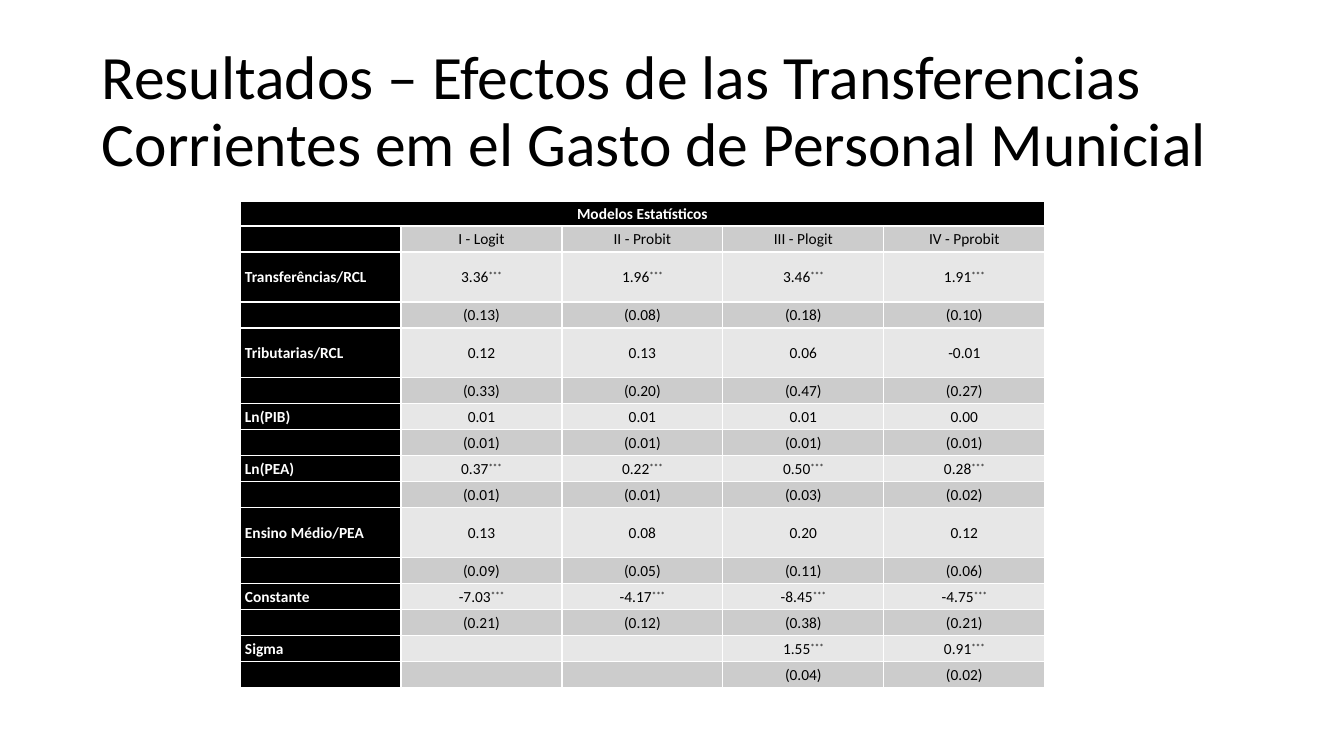
import pptx
import pptx.util
import pptx.dml.color
import pptx.enum.text

# Content
TITLE = ("Resultados – Efectos de las Transferencias "
         "Corrientes em el Gasto de Personal Municial")
HEADING = "Modelos Estatísticos"
STARS = "***"
ROWS = [
    ("", "I - Logit", "II - Probit", "III - Plogit", "IV - Pprobit"),
    ("Transferências/RCL", "3.36***", "1.96***", "3.46***", "1.91***"),
    ("", "(0.13)", "(0.08)", "(0.18)", "(0.10)"),
    ("Tributarias/RCL", "0.12", "0.13", "0.06", "-0.01"),
    ("", "(0.33)", "(0.20)", "(0.47)", "(0.27)"),
    ("Ln(PIB)", "0.01", "0.01", "0.01", "0.00"),
    ("", "(0.01)", "(0.01)", "(0.01)", "(0.01)"),
    ("Ln(PEA)", "0.37***", "0.22***", "0.50***", "0.28***"),
    ("", "(0.01)", "(0.01)", "(0.03)", "(0.02)"),
    ("Ensino Médio/PEA", "0.13", "0.08", "0.20", "0.12"),
    ("", "(0.09)", "(0.05)", "(0.11)", "(0.06)"),
    ("Constante", "-7.03***", "-4.17***", "-8.45***", "-4.75***"),
    ("", "(0.21)", "(0.12)", "(0.38)", "(0.21)"),
    ("Sigma", "", "", "1.55***", "0.91***"),
    ("", "", "", "(0.04)", "(0.02)"),
]
TALL_LABELS = ("Transferências/RCL", "Tributarias/RCL", "Ensino Médio/PEA")

# Look
FONT = "Calibri"
BLACK = pptx.dml.color.RGBColor(0x00, 0x00, 0x00)
WHITE = pptx.dml.color.RGBColor(0xFF, 0xFF, 0xFF)
DARK_BAND = pptx.dml.color.RGBColor(0xCC, 0xCC, 0xCC)
LIGHT_BAND = pptx.dml.color.RGBColor(0xE7, 0xE7, 0xE7)
CELL_SIZE = 11

# Geometry in px
SLIDE_W, SLIDE_H = 1344, 756
TITLE_BOX = (92, 40, 1160, 146)
TABLE_X, TABLE_Y = 240, 201
COL_W, HEADING_H, ROW_H, TALL_H = 161, 25, 26, 50
PAD_X, PAD_Y = 5, 1


def px(n):
    return pptx.util.Emu(round(n * 914400 / 100.8))


def style(p, size, color, bold, spacing):
    p.line_spacing = spacing
    p.font.name = FONT
    p.font.size = pptx.util.Pt(size)
    p.font.color.rgb = color
    p.font.bold = bold


def fill_cell(cell, text, fill, color, bold, centred):
    cell.fill.solid()
    cell.fill.fore_color.rgb = fill
    cell.vertical_anchor = pptx.enum.text.MSO_ANCHOR.MIDDLE
    cell.margin_left = cell.margin_right = px(PAD_X)
    cell.margin_top = cell.margin_bottom = px(PAD_Y)
    p = cell.text_frame.paragraphs[0]
    style(p, CELL_SIZE, color, bold, 1.07)
    if centred:
        p.alignment = pptx.enum.text.PP_ALIGN.CENTER
    if not text:  # keeps an empty row from growing
        p._p.get_or_add_endParaRPr().set("sz", str(CELL_SIZE * 100))
        return
    p.add_run().text = text.removesuffix(STARS)
    if text.endswith(STARS):
        r = p.add_run()
        r.text = STARS
        r.font._element.set("baseline", "30000")


prs = pptx.Presentation()
prs.slide_width, prs.slide_height = px(SLIDE_W), px(SLIDE_H)
s = prs.slides.add_slide(prs.slide_layouts[6])

# Title
tf = s.shapes.add_textbox(*map(px, TITLE_BOX)).text_frame
tf.word_wrap = True
tf.vertical_anchor = pptx.enum.text.MSO_ANCHOR.MIDDLE
p = tf.paragraphs[0]
p.text = TITLE
style(p, 44, BLACK, False, 0.9)

# Table
heights = [HEADING_H] + [TALL_H if row[0] in TALL_LABELS else ROW_H for row in ROWS]
n_cols = len(ROWS[0])
table = s.shapes.add_table(len(heights), n_cols, px(TABLE_X), px(TABLE_Y),
                           px(COL_W * n_cols), px(sum(heights))).table
table.first_col = True
for col in table.columns:
    col.width = px(COL_W)
for row, height in zip(table.rows, heights):
    row.height = px(height)

# Heading row
table.cell(0, 0).merge(table.cell(0, n_cols - 1))
fill_cell(table.cell(0, 0), HEADING, BLACK, WHITE, True, True)

# Labels and values
for i, (label, *values) in enumerate(ROWS, 1):
    fill_cell(table.cell(i, 0), label, BLACK, WHITE, True, False)
    band = DARK_BAND if i % 2 else LIGHT_BAND
    for j, value in enumerate(values, 1):
        fill_cell(table.cell(i, j), value, band, BLACK, False, True)

prs.save("out.pptx")
